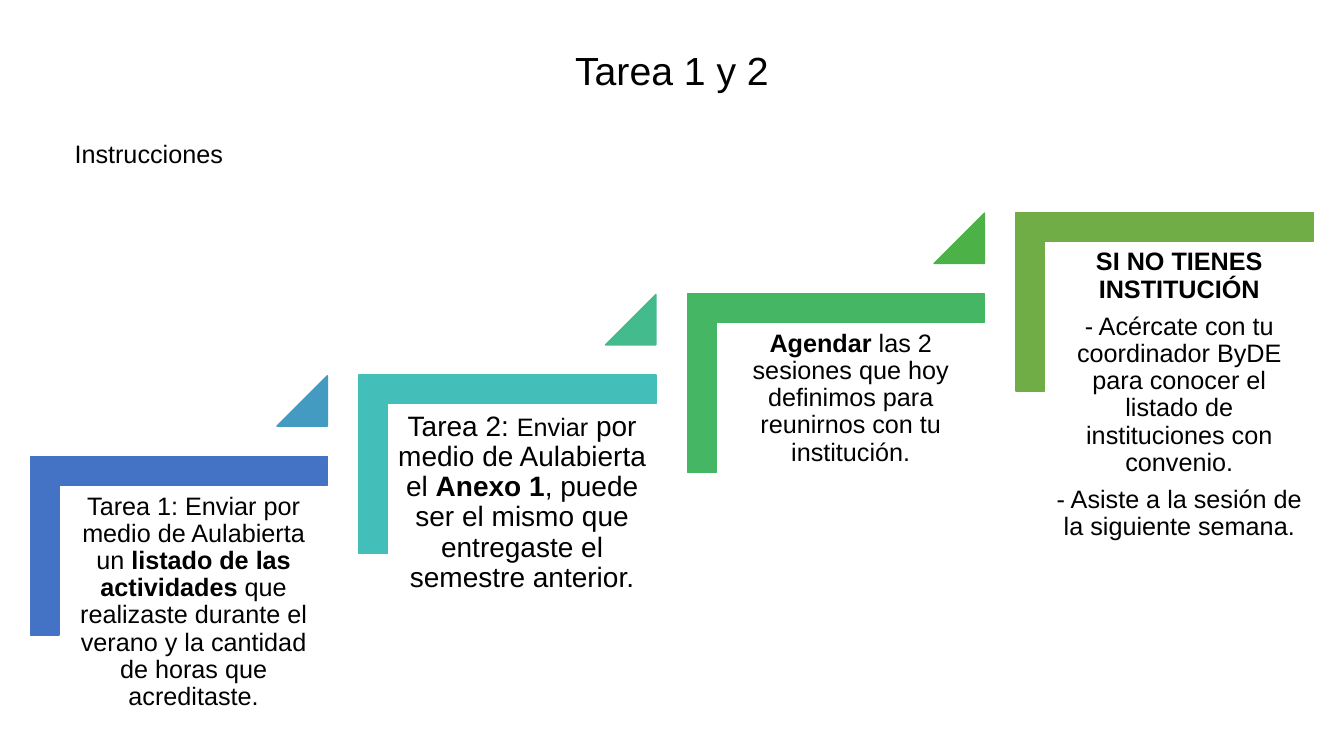
from pptx import Presentation
from pptx.dml.color import RGBColor
from pptx import util as u
from pptx.enum import shapes as s, text as t

HUES = {
    "ink": "000000",
    "step": ["4472C4", "43BEB9", "45B664", "70AD47"],
    "rise": ["449BC1", "43BB8D", "4CB146"],
}
STEPS = [
    [[("Tarea 1: Enviar por medio de Aulabierta un ", 18, False),
      ("listado de las actividades ", 18, True),
      ("que realizaste durante el verano y la cantidad de horas que acreditaste.", 18, False)]],
    [[("Tarea 2: ", 20, False),
      ("Enviar", 18, False),
      (" por medio de Aulabierta el ", 20, False),
      ("Anexo 1", 20, True),
      (", puede ser el mismo que entregaste el semestre anterior.", 20, False)]],
    [[("Agendar ", 18, True),
      ("las 2 sesiones que hoy definimos para reunirnos con tu institución.", 18, False)]],
    [[("SI NO TIENES INSTITUCIÓN", 18, True)],
     [("- Acércate con tu coordinador ByDE para conocer el listado de "
       "instituciones con convenio.", 18, False)],
     [("- Asiste a la sesión de la siguiente semana.", 18, False)]],
]
STEP_X, STEP_Y = 8.28, -2.05


def apply(item, form):
    for key, val in form.items():
        setattr(item, key, val)


class Deck:
    """Holds the style and the current slide, and draws its elements."""

    font = "Arial"
    body = {"alignment": t.PP_ALIGN.CENTER, "line_spacing": 0.9, "space_after": u.Pt(7)}
    head = {"alignment": t.PP_ALIGN.CENTER, "line_spacing": 0.9}

    def __init__(self):
        self.prs = Presentation()
        apply(self.prs, {"slide_width": u.Cm(33.87), "slide_height": u.Cm(19.05)})
        self.slide = self.prs.slides.add_slide(self.prs.slide_layouts[6])

    def text(self, box, paras, form, frame):
        area = self.slide.shapes.add_textbox(*map(u.Cm, box)).text_frame
        apply(area, {"word_wrap": True, **frame})
        for i, runs in enumerate(paras):
            para = area.paragraphs[0] if i == 0 else area.add_paragraph()
            apply(para, form)
            for words, size, bold in runs:
                run = para.add_run()
                run.text = words
                apply(run.font, {"name": self.font, "size": u.Pt(size), "bold": bold})
                run.font.color.rgb = RGBColor.from_string(HUES["ink"])

    def shape(self, kind, box, hue, adjust, turn=0):
        item = self.slide.shapes.add_shape(kind, *map(u.Cm, box))
        apply(item, {"rotation": turn})
        item.shadow.inherit = False
        item.fill.solid()
        for paint in (item.fill.fore_color, item.line.color):
            paint.rgb = RGBColor.from_string(hue)
        item.line.width = u.Pt(1)
        for i, val in enumerate(adjust):
            item.adjustments[i] = val

    def step(self, i, paras):
        x, y = i * STEP_X, i * STEP_Y
        self.shape(s.MSO_SHAPE.CORNER, (2.26 + x, 10.01 + y, 4.5, 7.49),
                   HUES["step"][i], (0.16, 0.16), 90)
        sides = ("left", "top", "right", "bottom")
        pad = {f"margin_{side}": u.Cm(0.19) for side in sides}
        self.text((1.5 + x, 12.24 + y, 6.76, 5.92), paras, self.body, pad)
        if i < len(HUES["rise"]):
            self.shape(s.MSO_SHAPE.ISOSCELES_TRIANGLE, (6.98 + x, 9.47 + y, 1.27, 1.27),
                       HUES["rise"][i], (1,))


def main():
    deck = Deck()
    deck.text((2.33, 0.69, 29.21, 3.68), [[("Tarea 1 y 2", 28, False)]],
              deck.head, {"margin_top": u.Cm(0.6)})
    for i, paras in enumerate(STEPS):
        deck.step(i, paras)
    deck.text((1.63, 3.35, 7.32, 1.03), [[("Instrucciones", 18, False)]],
              {}, {"auto_size": t.MSO_AUTO_SIZE.SHAPE_TO_FIT_TEXT})
    deck.prs.save("out.pptx")


if __name__ == "__main__":
    main()
